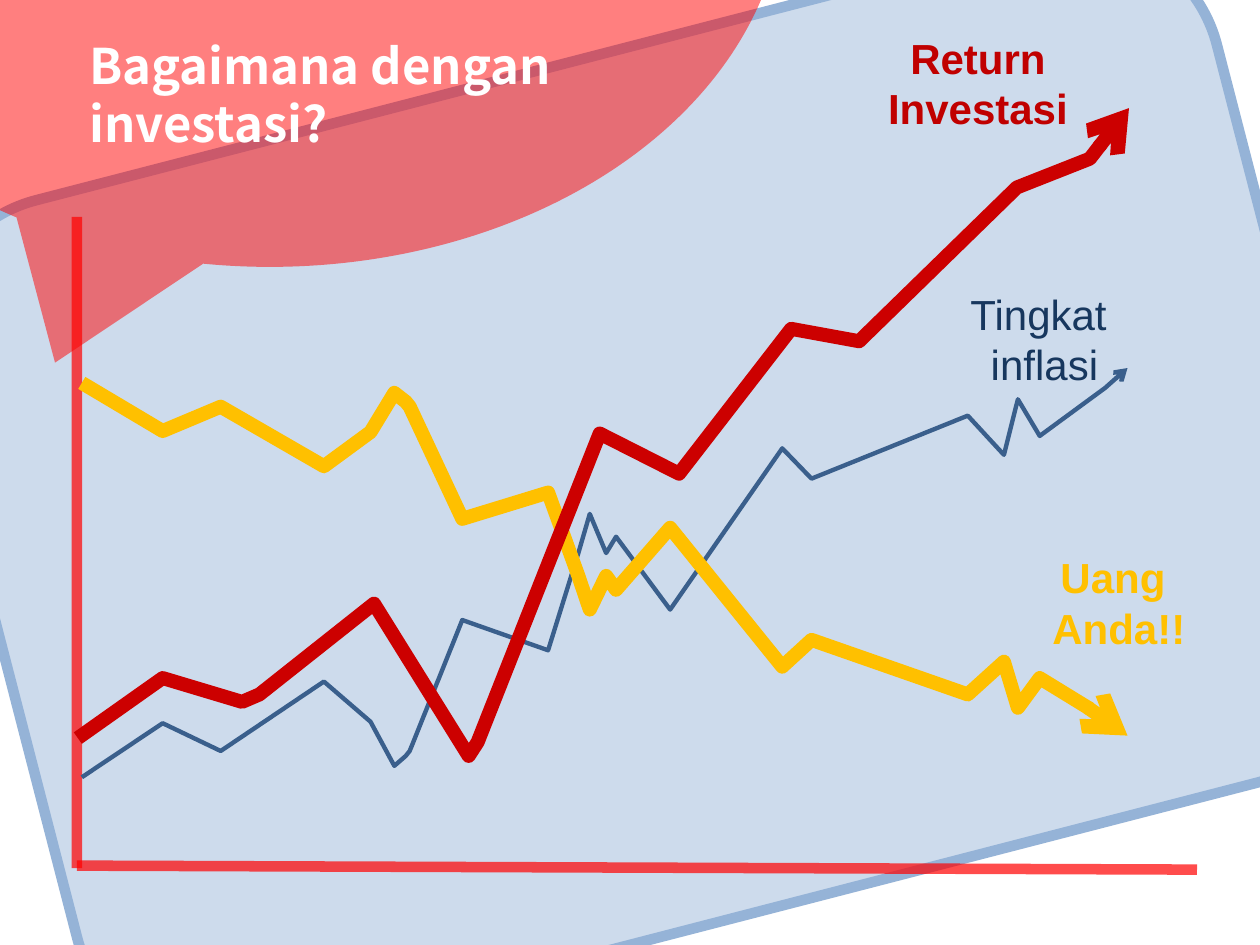
from typing import NamedTuple

from lxml.etree import SubElement
from pptx import Presentation
from pptx.dml.color import RGBColor
from pptx.enum.shapes import MSO_CONNECTOR, MSO_SHAPE
from pptx.enum.text import MSO_ANCHOR, MSO_AUTO_SIZE, PP_ALIGN
from pptx.oxml.ns import qn
from pptx.util import Cm, Pt


class Label(NamedTuple):
    """Wording and place of a text box, in centimetres."""
    text: str
    left: float
    top: float
    width: float
    height: float
    color: str
    size: int = 24
    bold: bool = True
    font: str = "Arial"


class Trend(NamedTuple):
    """A zigzag arrow and its label."""
    points: list[tuple[float, float]]
    color: str
    weight: float
    label: Label


class Plate(NamedTuple):
    """A see-through shape behind the graph, in centimetres."""
    kind: MSO_SHAPE
    box: tuple[float, float, float, float]
    color: str
    alpha: int
    turn: float = 0
    edge: str = ""


DAYS = [1.65, 3.28, 4.45, 6.53, 7.47, 7.95, 8.18, 8.26, 9.32, 11.05, 11.66, 11.89,
        12.22, 12.42, 13.51, 15.77, 16.36, 19.51, 20.24, 20.52, 20.96, 22.28, 22.73]
PRICE = [15.67, 14.58, 15.14, 13.74, 14.55, 15.44, 15.24, 15.14, 12.5, 13.11, 11.15, 10.36,
         11.15, 10.82, 12.29, 9.04, 9.65, 8.38, 9.17, 8.05, 8.79, 7.82, 7.42]
MONEY = [7.72, 8.69, 8.2, 9.4, 8.71, 7.92, 8.1, 8.2, 10.46, 9.93, 11.61, 12.29,
         11.61, 11.89, 10.64, 13.44, 12.9, 14, 13.34, 14.27, 13.67, 14.48, 14.83]
YIELD = [(1.57, 14.88), (3.28, 13.67), (4.88, 14.15), (5.23, 14), (7.54, 12.17),
         (9.45, 15.24), (9.63, 14.96), (12.09, 8.74), (13.69, 9.55), (15.95, 6.63),
         (17.32, 6.88), (20.5, 3.78), (21.97, 3.2), (22.76, 2.18)]

PLATES = [
    Plate(MSO_SHAPE.FLOWCHART_ALTERNATE_PROCESS, (-0.33, 1.14, 26.75, 17.53),
          "B9CDE5", 70, 345.5, "95B3D7"),
    Plate(MSO_SHAPE.OVAL_CALLOUT, (-4.95, -10.06, 20.78, 15.44), "FF0000", 50),
]
TITLE = Label("Bagaimana dengan \vinvestasi?", 1.55, 0.41, 21.18, 2.97,
              "FFFFFF", 28, font="Noto Sans CJK JP")
AXES = [(1.55, 17.5, 1.55, 4.37), (1.55, 17.45, 24.13, 17.53)]
TRENDS = [
    Trend(list(zip(DAYS, PRICE)), "3A5F8C", 2.5,
          Label("Tingkat \vinflasi", 17.98, 5.69, 6.15, 2.31, "17375E", bold=False)),
    Trend(list(zip(DAYS, MONEY)), "FFC000", 8,
          Label("Uang \vAnda!!", 19.48, 11, 6.15, 2.31, "FFC000")),
    Trend(YIELD, "CC0000", 8,
          Label("Return Investasi", 16.64, 0.53, 6.15, 2.31, "C00000")),
]


def paint(fill, color: str, alpha: int = 100) -> None:
    """Set a solid colour with the given opacity in percent."""
    fill.solid()
    fill.fore_color.rgb = RGBColor.from_string(color)
    if alpha < 100:
        tone = fill._xPr.find(qn("a:solidFill"))[0]
        SubElement(tone, qn("a:alpha"), val=str(alpha * 1000))


def stroke(line, color: str, weight: float, alpha: int = 100) -> None:
    """Set colour, width and opacity of a line."""
    paint(line.fill, color, alpha)
    line.width = Pt(weight)


def add_plate(slide, plate: Plate) -> None:
    """Draw one background shape."""
    shape = slide.shapes.add_shape(plate.kind, *map(Cm, plate.box))
    shape.rotation = plate.turn
    shape.shadow.inherit = False
    paint(shape.fill, plate.color, plate.alpha)
    if plate.edge:
        stroke(shape.line, plate.edge, 6)
    else:
        shape.line.fill.background()


def add_label(slide, label: Label, align: PP_ALIGN, anchor: MSO_ANCHOR) -> None:
    """Write a text box."""
    box = slide.shapes.add_textbox(*map(Cm, label[1:5]))
    frame = box.text_frame
    frame.word_wrap = True
    frame.auto_size = MSO_AUTO_SIZE.NONE
    frame.vertical_anchor = anchor
    frame.text = label.text
    para = frame.paragraphs[0]
    para.alignment = align
    font = para.font
    font.name, font.size, font.bold = label.font, Pt(label.size), label.bold
    paint(font.fill, label.color)


def add_axis(slide, ends: tuple[float, float, float, float]) -> None:
    """Draw one axis of the graph."""
    axis = slide.shapes.add_connector(MSO_CONNECTOR.STRAIGHT, *map(Cm, ends))
    stroke(axis.line, "FF0000", 6, 70)
    SubElement(axis._element.spPr, qn("a:effectLst"))


def add_trend(slide, trend: Trend) -> None:
    """Draw a zigzag arrow with its label."""
    first, *rest = [(Cm(x), Cm(y)) for x, y in trend.points]
    build = slide.shapes.build_freeform(*first)
    build.add_line_segments(rest, close=False)
    shape = build.convert_to_shape()
    shape.shadow.inherit = False
    shape.fill.background()
    stroke(shape.line, trend.color, trend.weight)
    edge = shape.line._get_or_add_ln()
    SubElement(edge, qn("a:round"))
    SubElement(edge, qn("a:tailEnd"), type="arrow")
    add_label(slide, trend.label, PP_ALIGN.CENTER, MSO_ANCHOR.TOP)


def main() -> None:
    """Build and save the slide."""
    deck = Presentation()
    deck.slide_width, deck.slide_height = Cm(25.4), Cm(19.05)
    slide = deck.slides.add_slide(deck.slide_layouts[6])
    for plate in PLATES:
        add_plate(slide, plate)
    add_label(slide, TITLE, PP_ALIGN.LEFT, MSO_ANCHOR.MIDDLE)
    for ends in AXES:
        add_axis(slide, ends)
    for trend in TRENDS:
        add_trend(slide, trend)
    deck.save("out.pptx")


if __name__ == "__main__":
    main()
